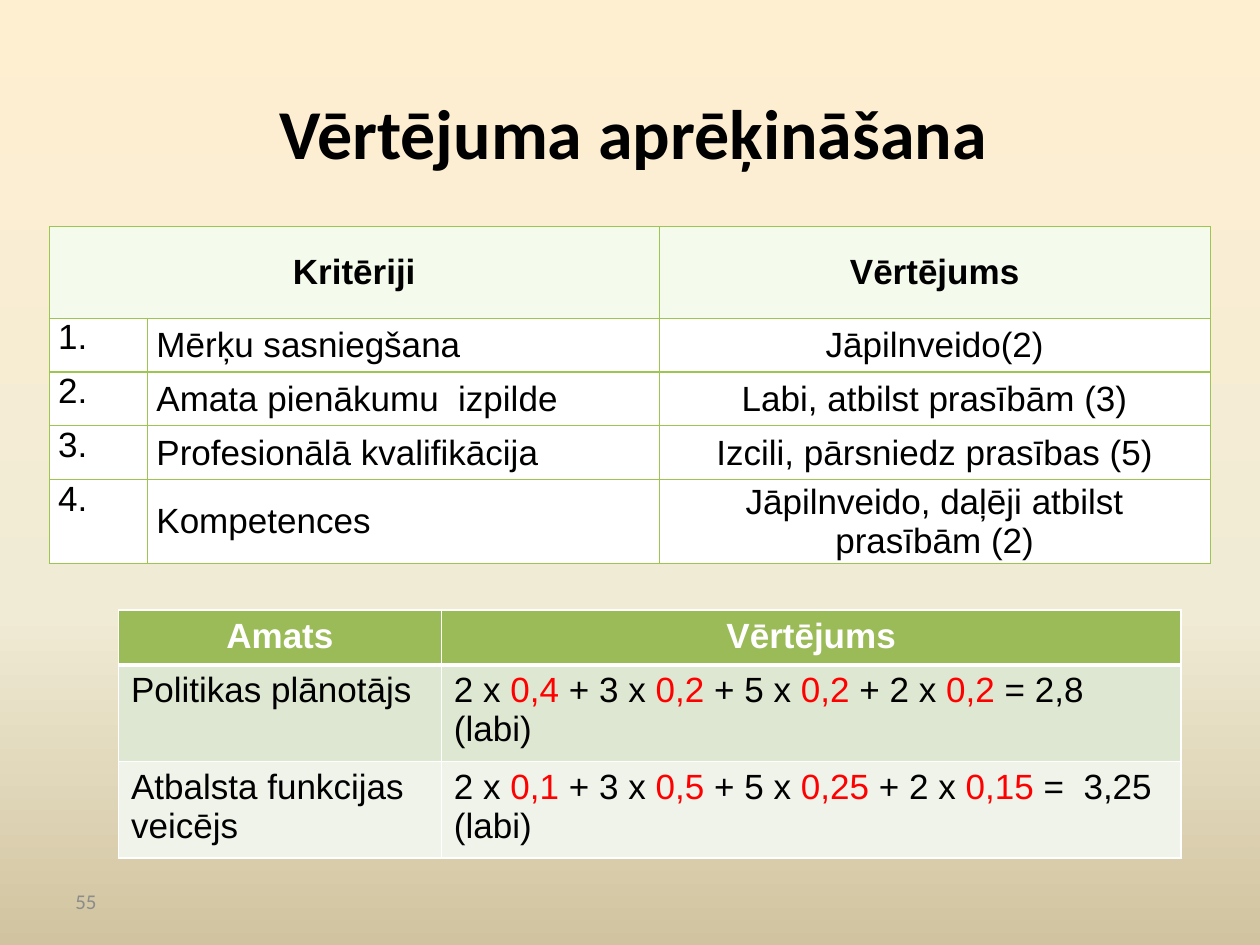
from copy import deepcopy
from dataclasses import dataclass

from lxml.etree import SubElement
from pptx import Presentation
from pptx.dml.color import RGBColor
from pptx.enum.text import MSO_ANCHOR, PP_ALIGN
from pptx.oxml.ns import qn
from pptx.util import Pt

BLACK, WHITE, RED = "000000", "FFFFFF", "FF0000"
GREEN, GRAY = "9EC54F", "8C8C8C"
HEADER_GREEN, MINT = "9BBB59", "F5FBEC"
SIDES = ("L", "R", "T", "B")


@dataclass
class TextStyle:
    size: float
    color: str = BLACK
    bold: bool = False
    font: str = "Arial"
    align: PP_ALIGN = PP_ALIGN.LEFT
    anchor: MSO_ANCHOR = MSO_ANCHOR.TOP


@dataclass
class TableSpec:
    left: float
    top: float
    columns: list[float]
    heights: list[float]
    rows: list[tuple[str, ...]]
    fills: list[str]
    styles: list[TextStyle]
    header: TextStyle
    margins: tuple[float, float]
    border: str
    border_width: float
    header_rule: float


def rgb(color: str) -> RGBColor:
    return RGBColor.from_string(color)


def write_text(text_frame, text: str, style: TextStyle) -> None:
    """Write the text, with every second part between bars in red."""
    paragraph = text_frame.paragraphs[0]
    paragraph.alignment = style.align
    for index, part in enumerate(text.split("|")):
        run = paragraph.add_run()
        run.text = part
        run.font.name = style.font
        run.font.size = Pt(style.size)
        run.font.bold = style.bold
        run.font.color.rgb = rgb(RED if index % 2 else style.color)


def add_text(slide, left: float, top: float, width: float, height: float,
             text: str, style: TextStyle) -> None:
    shape = slide.shapes.add_textbox(Pt(left), Pt(top), Pt(width), Pt(height))
    shape.text_frame.word_wrap = True
    shape.text_frame.vertical_anchor = style.anchor
    write_text(shape.text_frame, text, style)


def set_borders(cell, color: str, widths: dict[str, float]) -> None:
    properties = cell._tc.get_or_add_tcPr()
    for position, side in enumerate(SIDES):
        line = SubElement(properties, qn(f"a:ln{side}"), w=str(Pt(widths[side])))
        fill = SubElement(line, qn("a:solidFill"))
        SubElement(fill, qn("a:srgbClr"), val=color)
        properties.insert(position, line)


def add_table(slide, spec: TableSpec):
    frame = slide.shapes.add_table(
        len(spec.rows), len(spec.columns), Pt(spec.left), Pt(spec.top),
        Pt(sum(spec.columns)), Pt(sum(spec.heights)))
    table = frame.table
    table.first_row = table.horz_banding = False
    for column, width in zip(table.columns, spec.columns):
        column.width = Pt(width)
    for row_index, texts in enumerate(spec.rows):
        table.rows[row_index].height = Pt(spec.heights[row_index])
        for column_index, text in enumerate(texts):
            cell = table.cell(row_index, column_index)
            style = spec.styles[column_index] if row_index else spec.header
            cell.margin_left = cell.margin_right = Pt(spec.margins[0])
            cell.margin_top = cell.margin_bottom = Pt(spec.margins[1])
            cell.vertical_anchor = style.anchor
            cell.fill.solid()
            cell.fill.fore_color.rgb = rgb(spec.fills[row_index])
            widths = dict.fromkeys(SIDES, spec.border_width)
            if row_index < 2:
                widths["T" if row_index else "B"] = spec.header_rule
            set_borders(cell, spec.border, widths)
            if text:
                write_text(cell.text_frame, text, style)
    return table


def set_background(slide, colors: list[tuple[float, str]]) -> None:
    fill = slide.background.fill
    fill.gradient()
    fill.gradient_angle = 270
    stops = fill.gradient_stops
    stop_list = stops[0]._gs.getparent()
    stop_list.append(deepcopy(stops[0]._gs))
    for stop, (position, color) in zip(fill.gradient_stops, colors):
        stop.position = position
        stop.color.rgb = rgb(color)


def main() -> None:
    presentation = Presentation()
    presentation.slide_width, presentation.slide_height = Pt(720), Pt(540)
    slide = presentation.slides.add_slide(presentation.slide_layouts[6])
    set_background(slide, [(0, "FFEFD1"), (0.65, "F0EBD5"), (1, "D1C39F")])

    center, middle = PP_ALIGN.CENTER, MSO_ANCHOR.MIDDLE
    body = TextStyle(20)
    add_text(slide, 39.6, 33.8, 644.4, 82.8, "Vērtējuma aprēķināšana",
             TextStyle(40, bold=True, font="Calibri", align=center, anchor=middle))
    criteria = add_table(slide, TableSpec(
        left=28.2, top=129.5, columns=[56.2, 292.3, 314.9],
        heights=[52.3, 30.8, 30.8, 30.8, 44.6],
        rows=[
            ("Kritēriji", "", "Vērtējums"),
            ("1.", "Mērķu sasniegšana", "Jāpilnveido(2)"),
            ("2.", "Amata pienākumu  izpilde", "Labi, atbilst prasībām (3)"),
            ("3.", "Profesionālā kvalifikācija", "Izcili, pārsniedz prasības (5)"),
            ("4.", "Kompetences", "Jāpilnveido, daļēji atbilst prasībām (2)"),
        ],
        fills=[MINT] + [WHITE] * 4,
        styles=[body, TextStyle(20, anchor=middle),
                TextStyle(20, align=center, anchor=middle)],
        header=TextStyle(20, bold=True, align=center, anchor=middle),
        margins=(5, 0), border=GREEN, border_width=0.75, header_rule=0.75))
    criteria.cell(0, 0).merge(criteria.cell(0, 1))
    add_text(slide, 36, 500.4, 167.8, 28.8, "55",
             TextStyle(12, GRAY, font="Calibri", anchor=middle))
    add_table(slide, TableSpec(
        left=67.7, top=348.7, columns=[184.5, 422.8], heights=[29.5, 51.8, 51.8],
        rows=[
            ("Amats", "Vērtējums"),
            ("Politikas plānotājs",
             "2 x |0,4| + 3 x |0,2| + 5 x |0,2 |+ 2 x |0,2| = 2,8 (labi)"),
            ("Atbalsta funkcijas veicējs",
             "2 x |0,1| + 3 x |0,5| + 5 x |0,25| + 2 x |0,15| =  3,25 (labi)"),
        ],
        fills=[HEADER_GREEN, "DEE7D1", "EFF3EA"],
        styles=[body, body],
        header=TextStyle(20, WHITE, bold=True, align=center),
        margins=(7.2, 3.6), border=WHITE, border_width=1, header_rule=3))
    presentation.save("out.pptx")


if __name__ == "__main__":
    main()
